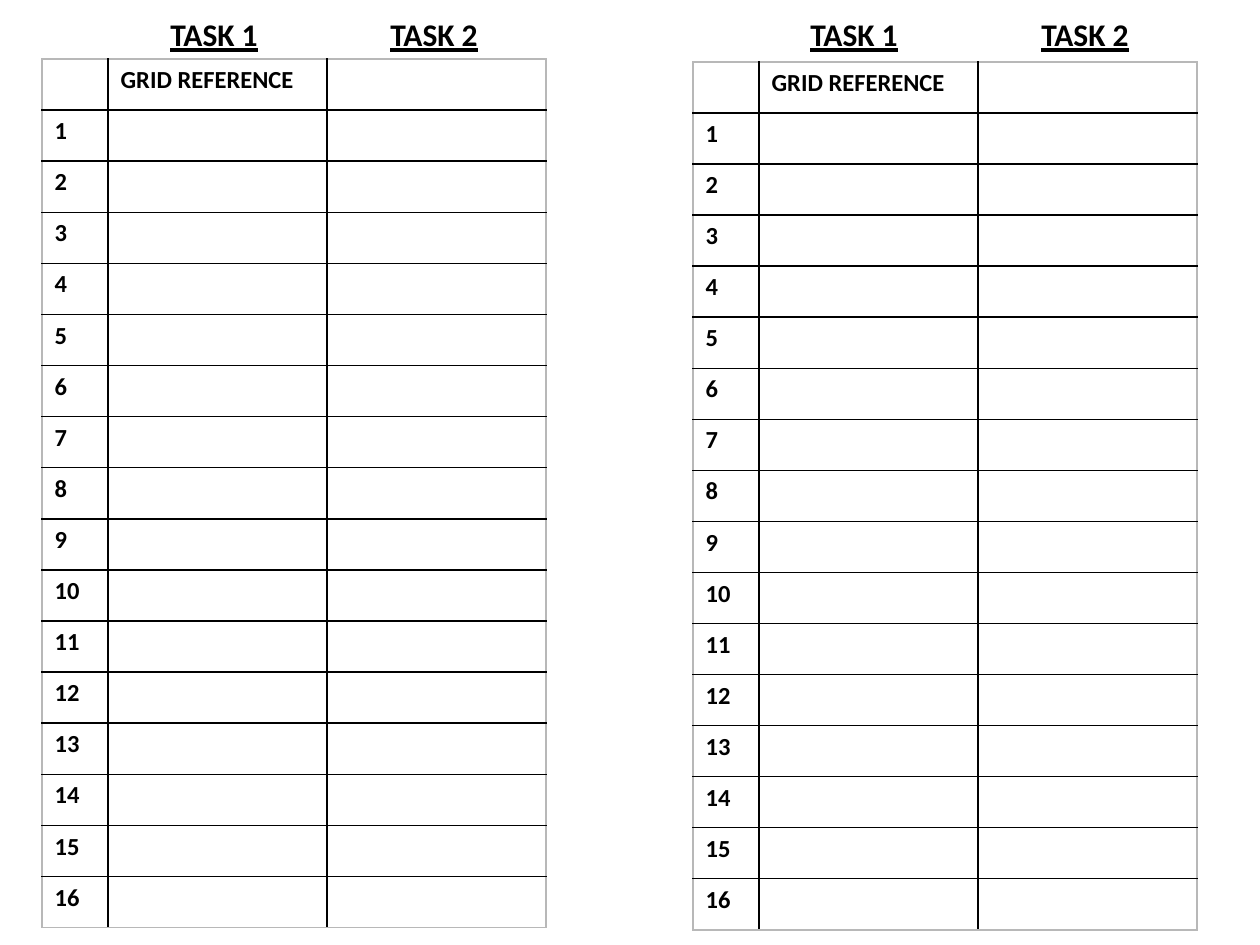
from lxml.etree import SubElement
from pptx import Presentation
from pptx.dml.color import RGBColor as Rgb
from pptx.enum.text import MSO_AUTO_SIZE as AutoSize
from pptx.oxml.ns import qn
from pptx.util import Pt

EMU_PER_PX = 914400 / 126
COLORS = {"ink": "000000", "frame": "B8B8B8"}
HEADING = {"name": "Calibri", "size": Pt(18), "bold": True, "underline": True}
LABEL = {"name": "Calibri", "size": Pt(14), "bold": True}
COLUMN_WIDTHS = [66, 219, 219]
TASK_COUNT = 16
ROW_COUNT = TASK_COUNT + 1
TABLE_HEIGHT = 868

# Table left and top, then the left of each heading
SHEETS = [(42, 59, (158, 378)), (693, 62, (798, 1029))]


def px(*lengths):
    return [round(length * EMU_PER_PX) for length in lengths]


def write(para, text, style):
    span = para.add_run()
    span.text = text
    for name, value in style.items():
        setattr(span.font, name, value)
    span.font.color.rgb = Rgb.from_string(COLORS["ink"])


deck = Presentation()
deck.slide_width, deck.slide_height = px(1260, 945)
page = deck.slides.add_slide(deck.slide_layouts[6])

for left, top, heading_lefts in SHEETS:
    frame = page.shapes.add_table(
        ROW_COUNT, len(COLUMN_WIDTHS), *px(left, top, sum(COLUMN_WIDTHS), TABLE_HEIGHT)
    )
    table = frame.table
    table.first_row = table.horz_banding = False
    for column, width in zip(table.columns, px(*COLUMN_WIDTHS)):
        column.width = width

    for row in range(ROW_COUNT):
        for col in range(len(COLUMN_WIDTHS)):
            cell = table.cell(row, col)
            outer_edges = {
                "lnL": col == 0,
                "lnR": col == len(COLUMN_WIDTHS) - 1,
                "lnT": row == 0,
                "lnB": row == ROW_COUNT - 1,
            }
            properties = cell._tc.get_or_add_tcPr()
            for edge, is_outer in outer_edges.items():
                line = SubElement(properties, qn(f"a:{edge}"), w=str(Pt(1)))
                fill = SubElement(line, qn("a:solidFill"))
                color = COLORS["frame" if is_outer else "ink"]
                SubElement(fill, qn("a:srgbClr"), val=color)
            cell.fill.background()

    write(table.cell(0, 1).text_frame.paragraphs[0], "GRID REFERENCE", LABEL)
    for number in range(1, ROW_COUNT):
        write(table.cell(number, 0).text_frame.paragraphs[0], str(number), LABEL)

    for task, heading_left in enumerate(heading_lefts, start=1):
        box = page.shapes.add_textbox(*px(heading_left, 9, 113, 50))
        box.text_frame.word_wrap = False
        box.text_frame.auto_size = AutoSize.SHAPE_TO_FIT_TEXT
        write(box.text_frame.paragraphs[0], f"TASK {task}", HEADING)

deck.save("out.pptx")
